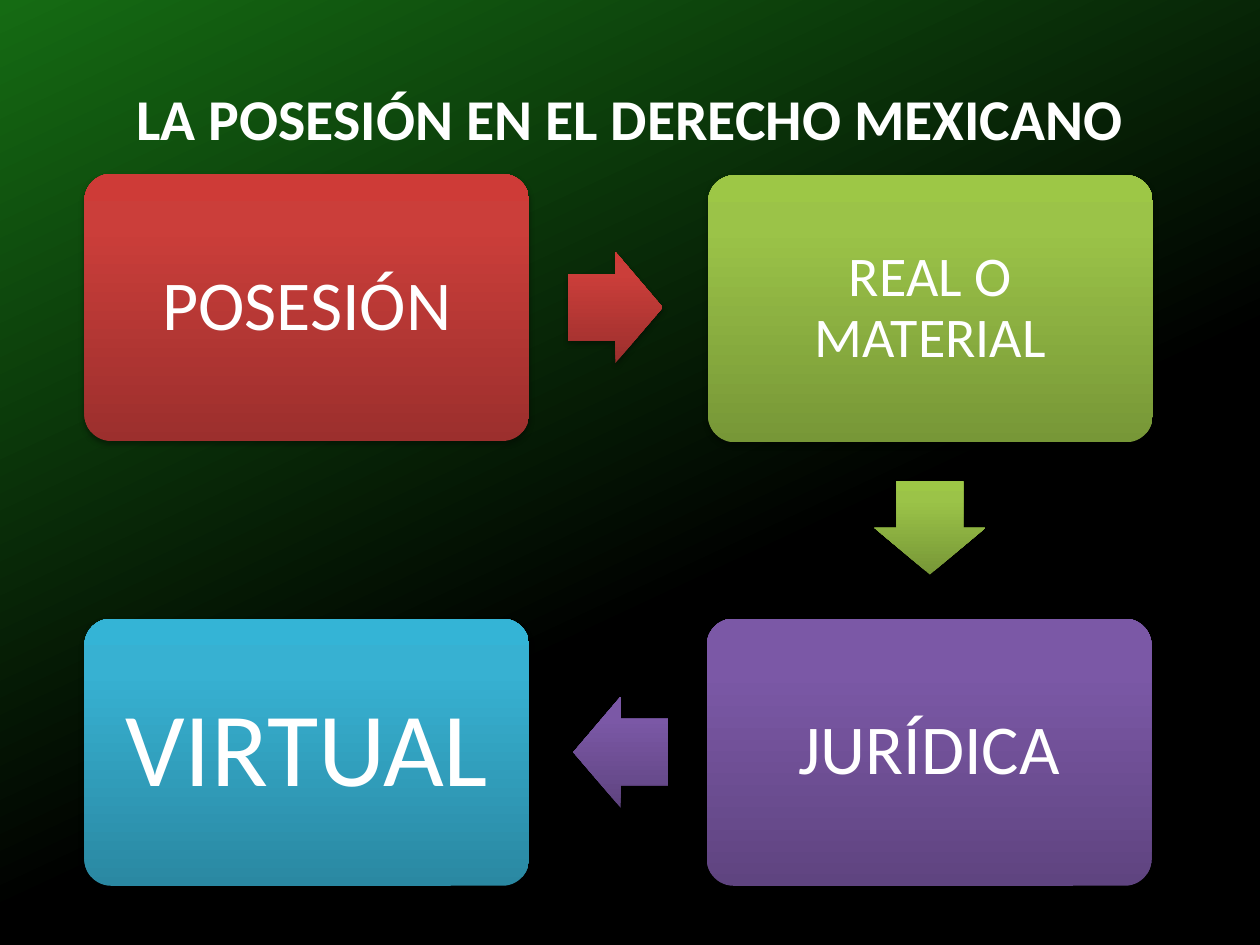
import pptx
import pptx.util
import pptx.dml.color
import pptx.enum.shapes
import pptx.enum.text
import pptx.oxml.ns
import lxml.etree

Inches = pptx.util.Inches
Pt = pptx.util.Pt
qn = pptx.oxml.ns.qn
SHAPE = pptx.enum.shapes.MSO_SHAPE
MIDDLE = pptx.enum.text.MSO_ANCHOR.MIDDLE
CENTER = pptx.enum.text.PP_ALIGN.CENTER

COLORS = {"text": "FFFFFF", "shadow": "000000"}
GRADIENTS = {
    "background": [(40, "000000"), (100, "156B13")],
    "red": [(0, "9C2F2D"), (80, "CB3E3A"), (100, "CE3B37")],
    "green": [(0, "779737"), (80, "9BC348"), (100, "9DC746")],
    "purple": [(0, "5F4480"), (80, "7B58A6"), (100, "7C57A8")],
    "blue": [(0, "2A88A2"), (80, "37B1D2"), (100, "34B4D6")],
}


def paint_gradient(fill, element, name, angle):
    fill.gradient()
    fill.gradient_angle = angle
    stops = next(element.iter(qn("a:gsLst")))
    for stop in list(stops):
        stops.remove(stop)
    for position, color in GRADIENTS[name]:
        stop = lxml.etree.SubElement(stops, qn("a:gs"), pos=str(position * 1000))
        lxml.etree.SubElement(stop, qn("a:srgbClr"), val=color)


def add_block(kind, left, top, width, height, gradient, adjustments):
    block = page.shapes.add_shape(
        kind, Inches(left), Inches(top), Inches(width), Inches(height))
    for index, value in enumerate(adjustments):
        block.adjustments[index] = value
    paint_gradient(block.fill, block._element, gradient, 90)
    block.line.fill.background()
    block.shadow.inherit = False
    effects = block._element.spPr.find(qn("a:effectLst"))
    shadow = lxml.etree.SubElement(
        effects, qn("a:outerShdw"), blurRad=str(Pt(3.1)), dist=str(Pt(1.8)),
        dir="5400000", rotWithShape="0")
    color = lxml.etree.SubElement(shadow, qn("a:srgbClr"), val=COLORS["shadow"])
    lxml.etree.SubElement(color, qn("a:alpha"), val="35000")
    return block


deck = pptx.Presentation()
deck.slide_width = Inches(10)
deck.slide_height = Inches(7.5)
page = deck.slides.add_slide(deck.slide_layouts[5])
paint_gradient(page.background.fill, page._element, "background", 115)

title = page.shapes.title
title.left, title.top = Inches(0.94), Inches(0.6)
title.width, title.height = Inches(8.12), Inches(0.66)
title.text_frame.text = "LA POSESIÓN EN EL DERECHO MEXICANO"
title.text_frame.word_wrap = False
title.text_frame.vertical_anchor = MIDDLE
para = title.text_frame.paragraphs[0]
para.alignment = CENTER
para.font.name = "Calibri"
para.font.size = Pt(33)
para.font.bold = True
para.font.color.rgb = pptx.dml.color.RGBColor.from_string(COLORS["text"])

cards = [
    ("POSESIÓN", 0.67, 1.38, "red", 40, 0.17),
    ("REAL O MATERIAL", 5.62, 1.39, "green", 32, 0.13),
    ("JURÍDICA", 5.61, 4.91, "purple", 40, 0.17),
    ("VIRTUAL", 0.67, 4.91, "blue", 60, 0.2),
]
for label, left, top, gradient, size, inset in cards:
    card = add_block(SHAPE.ROUNDED_RECTANGLE, left, top, 3.53, 2.12, gradient, [0.1])
    frame = card.text_frame
    frame.text = label
    frame.word_wrap = True
    frame.vertical_anchor = MIDDLE
    frame.margin_left = frame.margin_right = Inches(inset)
    frame.margin_top = frame.margin_bottom = Inches(inset)
    para = frame.paragraphs[0]
    para.alignment = CENTER
    para.line_spacing = 0.9
    para.font.name = "Calibri"
    para.font.size = Pt(size)
    para.font.color.rgb = pptx.dml.color.RGBColor.from_string(COLORS["text"])

arrows = [
    (SHAPE.RIGHT_ARROW, 4.51, 2, 0.75, 0.88, "red"),
    (SHAPE.DOWN_ARROW, 6.94, 3.82, 0.88, 0.74, "green"),
    (SHAPE.LEFT_ARROW, 4.55, 5.53, 0.75, 0.88, "purple"),
]
for kind, left, top, width, height, gradient in arrows:
    add_block(kind, left, top, width, height, gradient, [0.6, 0.5])

deck.save("out.pptx")
